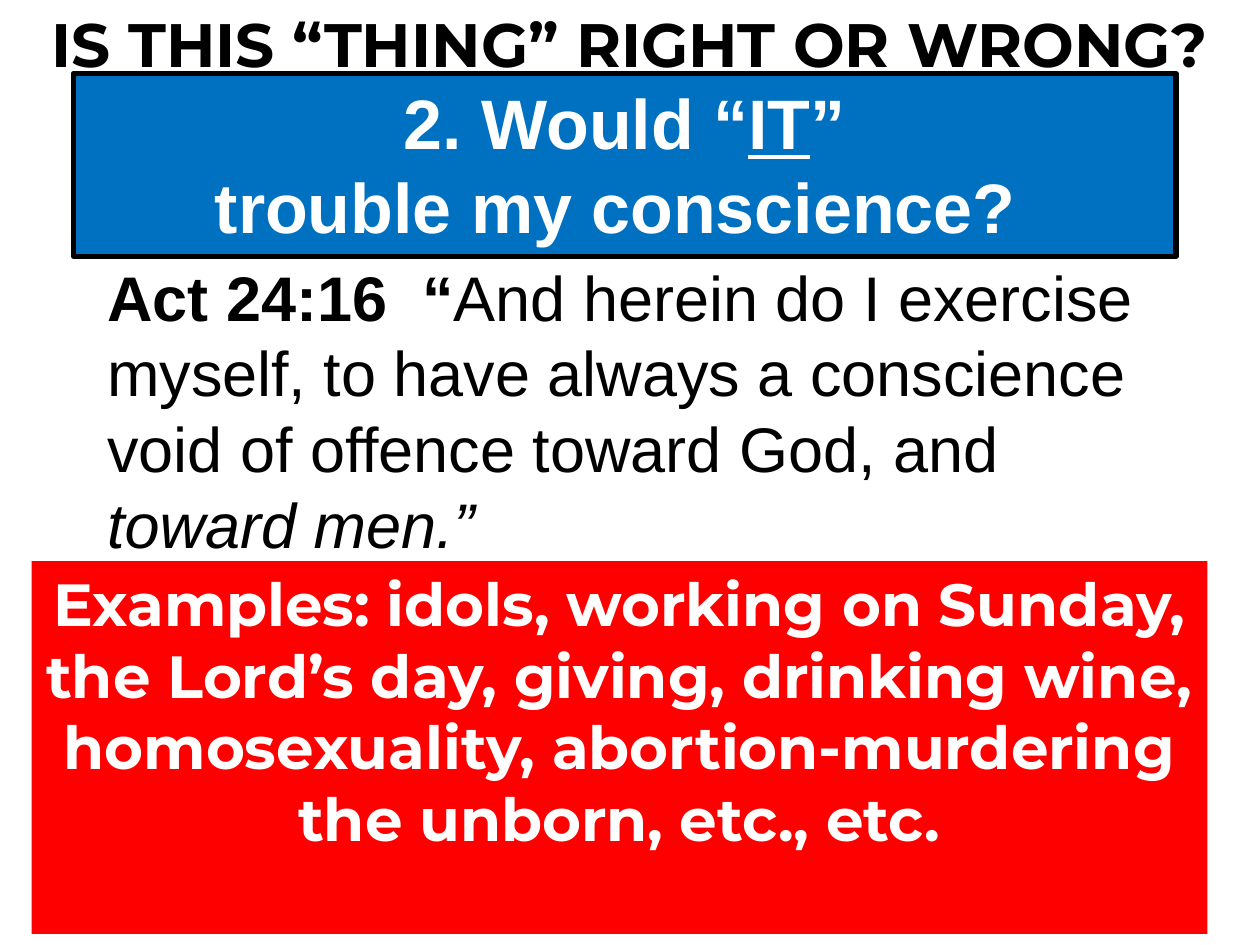
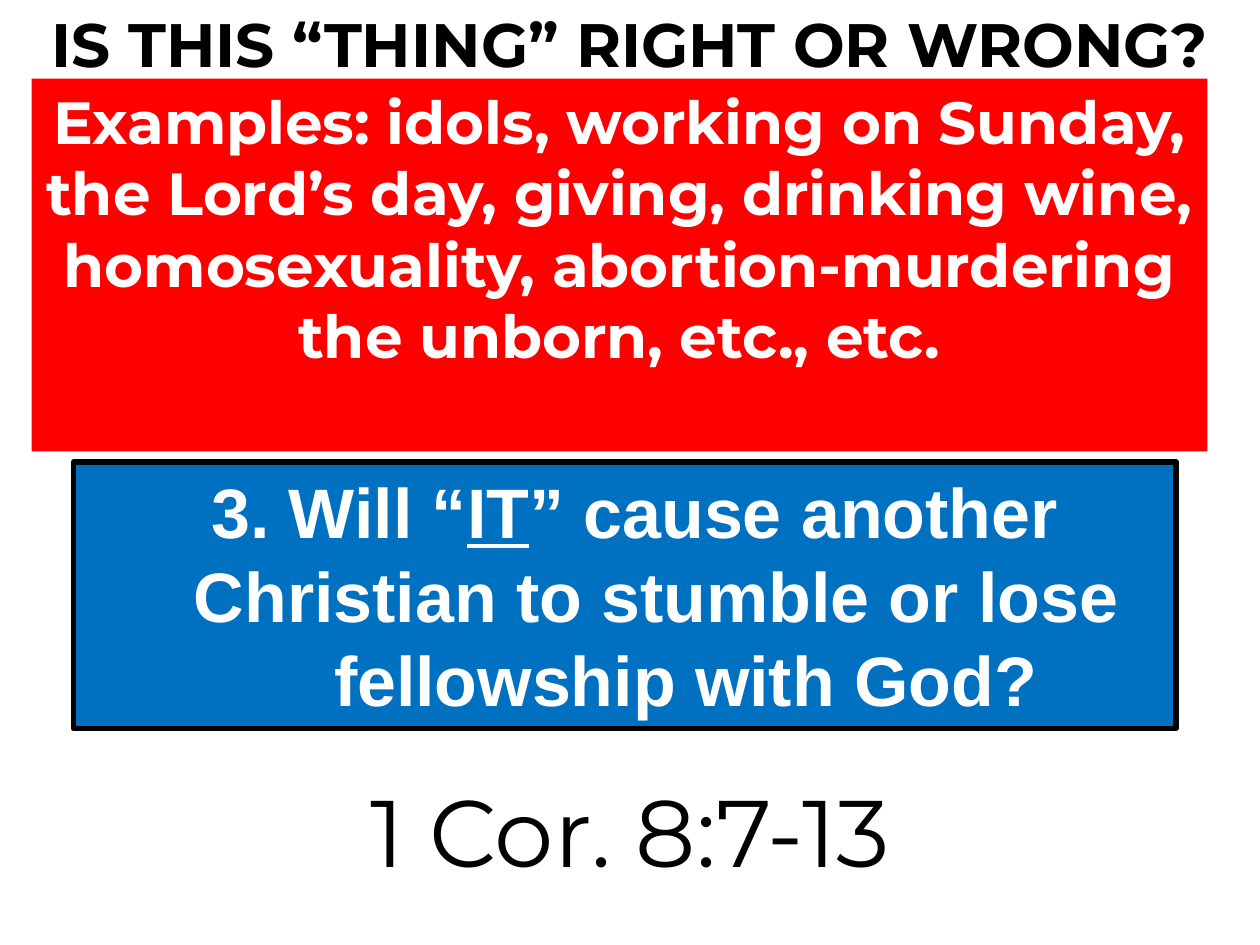
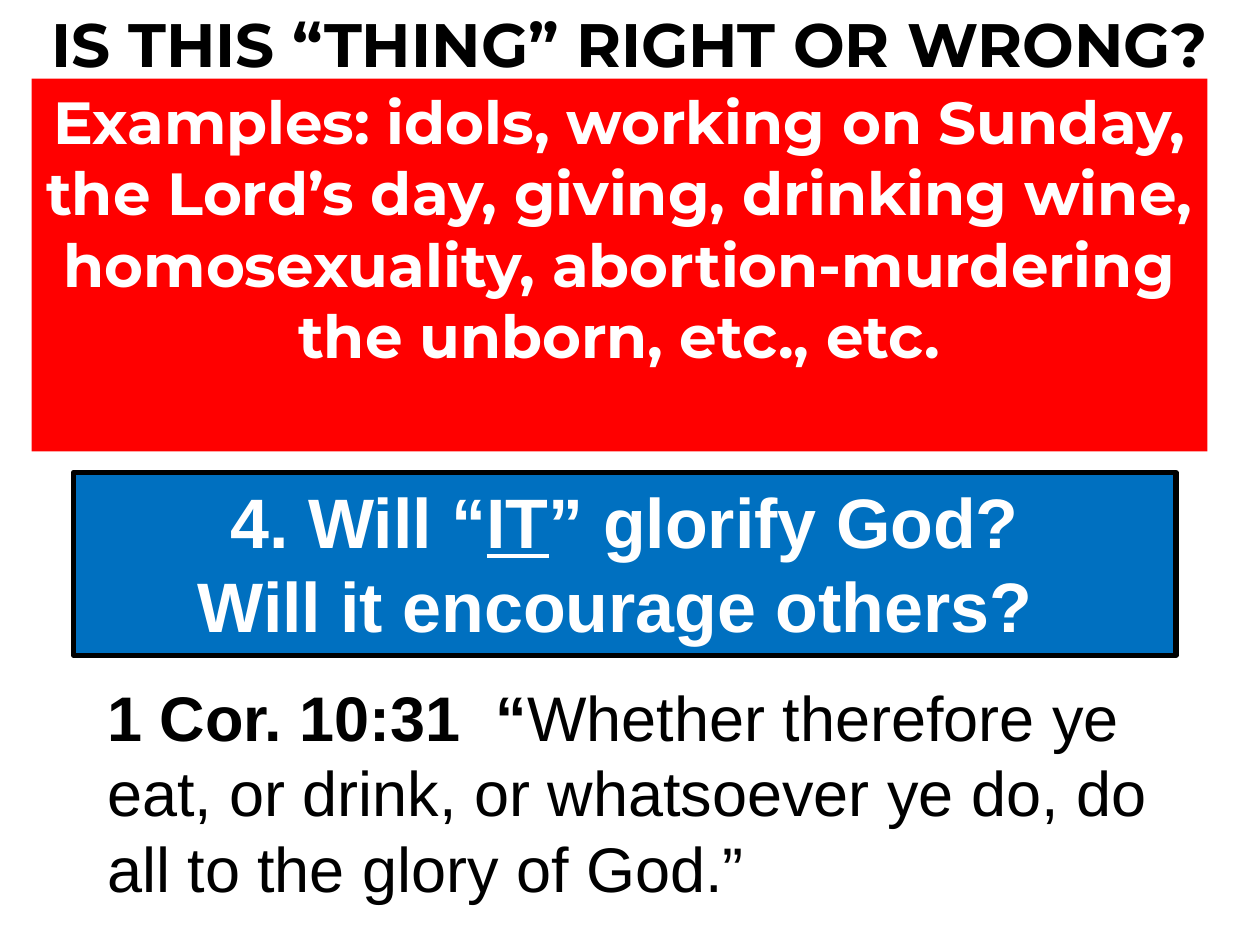
from dataclasses import dataclass

from lxml import etree
from pptx import Presentation
from pptx.dml.color import RGBColor
from pptx.enum import shapes, text
from pptx.oxml.ns import qn
from pptx.util import Emu, Inches, Pt

COLORS = {"ink": "000000", "paper": "FFFFFF", "question": "0070C0", "examples": "FF0000"}
COLUMNS, ROWS = 120, 90
WIDTH, HEIGHT = Inches(10), Inches(7.5)
HANGING = 0.81
TITLE = "IS THIS “THING” RIGHT OR WRONG?"
EXAMPLES = (
    "Examples: idols, working on Sunday, the Lord’s day, giving, drinking wine, "
    "homosexuality, abortion-murdering the unborn, etc., etc."
)


@dataclass(frozen=True)
class Area:
    column: float
    row: float
    columns: float
    rows: float


@dataclass(frozen=True)
class Style:
    font: str
    size: float
    color: str = "ink"
    bold: bool = False
    centered: bool = True


@dataclass(frozen=True)
class Span:
    words: str
    bold: bool | None = None
    italic: bool | None = None
    underline: bool | None = None


@dataclass(frozen=True)
class Line:
    spans: tuple[Span, ...]
    margin: float = 0
    indent: float = 0


@dataclass(frozen=True)
class Lesson:
    question: tuple[Line, ...]
    question_area: Area
    verse: tuple[Line, ...]
    verse_area: Area
    verse_style: Style
    examples_row: float


TITLE_STYLE = Style("Montserrat", 35, bold=True)
EXAMPLES_STYLE = Style("Montserrat", 34, "paper", bold=True)
QUESTION_STYLE = Style("Arial", 40, "paper", bold=True)
VERSE_STYLE = Style("Arial", 36, centered=False)
REFERENCE_STYLE = Style("Montserrat", 54)
TITLE_AREA = Area(0, 0, COLUMNS, 8)


def plain(words: str, margin: float = 0, indent: float = 0) -> Line:
    return Line((Span(words),), margin, indent)


def hanging(*spans: Span) -> Line:
    return Line(spans, HANGING, -HANGING)


def asking(before: str, after: str) -> Line:
    return hanging(Span(before), Span("IT", underline=True), Span(after))


def question_area(row: float, rows: float) -> Area:
    return Area(7, row, 105, rows)


def verse_area(row: float, rows: float) -> Area:
    return Area(9, row, 102, rows)


LESSONS = (
    Lesson(
        (asking(" 2. Would “", "” "), hanging(Span("trouble my conscience? "))),
        question_area(7, 17.4),
        (
            Line((
                Span("Act 24:16  “", bold=True),
                Span("And herein do I exercise myself, to have always a conscience "
                     "void of offence toward God, and "),
                Span("toward men.”", italic=True),
            )),
        ),
        verse_area(24, 29),
        VERSE_STYLE,
        53.45,
    ),
    Lesson(
        (
            asking(" 3. Will “", "” cause another"),
            plain("Christian to stumble or lose", 0.5),
            plain("fellowship with God? ", 1.12),
        ),
        question_area(44, 25.4),
        (plain("1 Cor. 8:7-13"),),
        Area(0, 73, COLUMNS, 23),
        REFERENCE_STYLE,
        7.5,
    ),
    Lesson(
        (asking("4. Will “", "” glorify God?"), hanging(Span("Will it encourage others? "))),
        question_area(45, 17.4),
        (
            Line((
                Span("1 Cor. 10:31  “", bold=True),
                Span("Whether therefore ye eat, or drink, or whatsoever ye do, "
                     "do all to the glory of God.”"),
            )),
        ),
        verse_area(64, 23),
        VERSE_STYLE,
        7.5,
    ),
)


def color(name: str) -> RGBColor:
    return RGBColor.from_string(COLORS[name])


def bounds(area: Area) -> dict[str, Emu]:
    return {
        "left": Emu(round(WIDTH * area.column / COLUMNS)),
        "top": Emu(round(HEIGHT * area.row / ROWS)),
        "width": Emu(round(WIDTH * area.columns / COLUMNS)),
        "height": Emu(round(HEIGHT * area.rows / ROWS)),
    }


def apply(target, values: dict) -> None:
    for name, value in values.items():
        setattr(target, name, value)


def write(box, lines: tuple[Line, ...], style: Style) -> None:
    frame = box.text_frame
    apply(frame, {
        "word_wrap": True,
        "auto_size": text.MSO_AUTO_SIZE.NONE,
        "vertical_anchor": text.MSO_ANCHOR.TOP,
    })
    for number, line in enumerate(lines):
        para = frame.add_paragraph() if number else frame.paragraphs[0]
        apply(para, {
            "alignment": text.PP_ALIGN.CENTER if style.centered else text.PP_ALIGN.LEFT,
            "line_spacing": 1.0,
            "space_before": Pt(0),
        })
        properties = para._p.get_or_add_pPr()
        properties.set("marL", str(Inches(line.margin)))
        properties.set("indent", str(Inches(line.indent)))
        etree.SubElement(properties, qn("a:buNone"))
        for span in line.spans:
            run = para.add_run()
            run.text = span.words
            apply(run.font, {
                "name": style.font,
                "size": Pt(style.size),
                "bold": style.bold if span.bold is None else span.bold,
                "italic": span.italic,
                "underline": span.underline,
            })
            run.font.color.rgb = color(style.color)


def fill_placeholder(box, area: Area, lines: tuple[Line, ...], style: Style) -> None:
    apply(box, bounds(area))
    write(box, lines, style)


def add_panel(page, area: Area, fill: str, lines: tuple[Line, ...], style: Style,
              outlined: bool = False) -> None:
    box = page.shapes.add_shape(shapes.MSO_SHAPE.RECTANGLE, **bounds(area))
    box.shadow.inherit = False
    box.fill.solid()
    box.fill.fore_color.rgb = color(fill)
    if outlined:
        box.line.color.rgb = color("ink")
        box.line.width = Pt(3)
    else:
        box.line.fill.background()
    write(box, lines, style)


def add_lesson(deck, lesson: Lesson) -> None:
    page = deck.slides.add_slide(deck.slide_layouts[1])
    fill_placeholder(page.shapes.title, TITLE_AREA, (plain(TITLE),), TITLE_STYLE)
    fill_placeholder(page.placeholders[1], lesson.verse_area, lesson.verse, lesson.verse_style)
    add_panel(page, lesson.question_area, "question", lesson.question, QUESTION_STYLE,
              outlined=True)
    add_panel(page, Area(3, lesson.examples_row, 112, 35.5), "examples",
              (plain(EXAMPLES),), EXAMPLES_STYLE)


def main() -> None:
    deck = Presentation()
    apply(deck, {"slide_width": WIDTH, "slide_height": HEIGHT})
    background = deck.slide_master.background.fill
    background.solid()
    background.fore_color.rgb = color("paper")
    for lesson in LESSONS:
        add_lesson(deck, lesson)
    deck.save("out.pptx")


if __name__ == "__main__":
    main()
